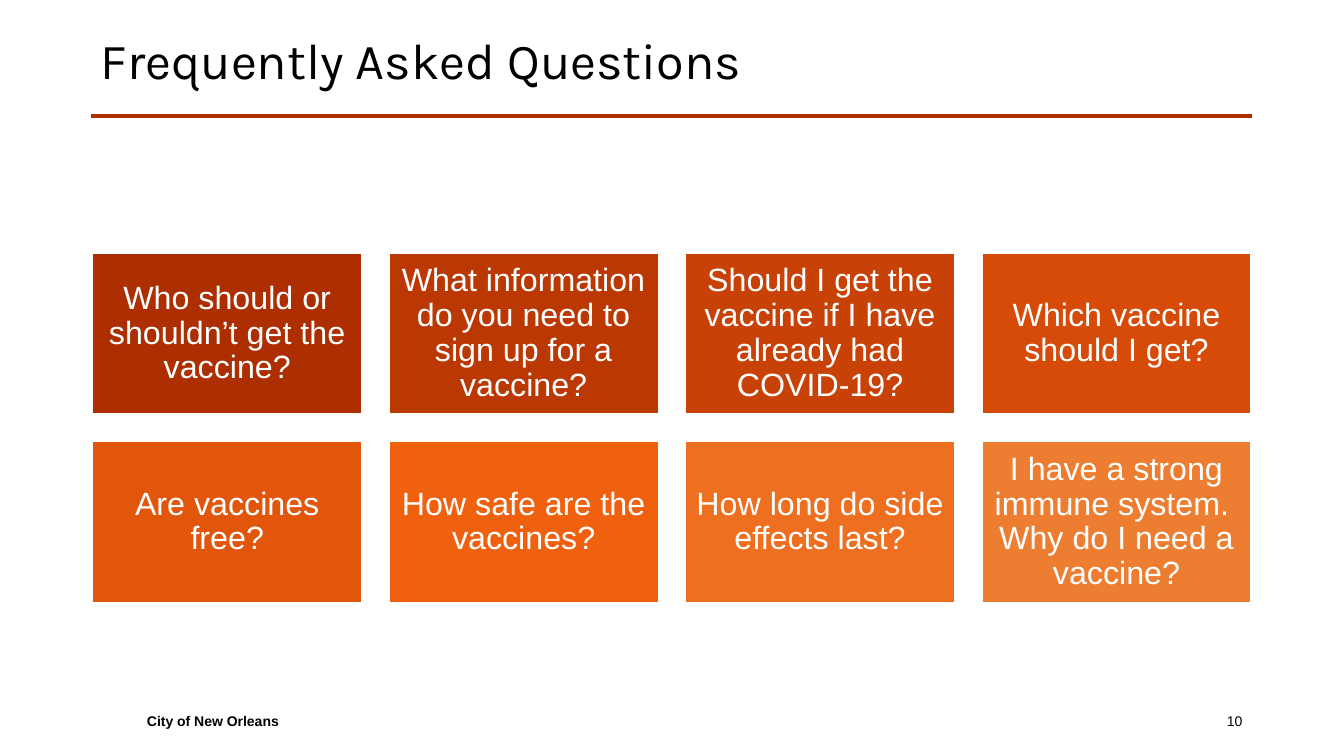
from lxml.etree import SubElement
from pptx import Presentation
from pptx.dml.color import RGBColor
from pptx.enum.shapes import MSO_CONNECTOR, MSO_SHAPE
from pptx.enum.text import MSO_ANCHOR, PP_ALIGN
from pptx.oxml.ns import qn
from pptx.util import Emu, Pt


def px(n):
    return Emu(n * 9144)


def color(code):
    return RGBColor.from_string(code)


class Deck:
    font = "Arial"
    ink = "000000"
    paper = "FFFFFF"
    accent = "AD2F01"

    def __init__(self, width, height):
        self.prs = Presentation()
        self.prs.slide_width, self.prs.slide_height = px(width), px(height)
        self.slide = self.prs.slides.add_slide(self.prs.slide_layouts[6])

    def fill_text(self, shape, text, size, ink, align, font=None, bold=False):
        frame = shape.text_frame
        frame.word_wrap = True
        frame.vertical_anchor = MSO_ANCHOR.MIDDLE
        para = frame.paragraphs[0]
        para.text = text
        para.alignment = align
        para.font.name = font or self.font
        para.font.size = Pt(size)
        para.font.bold = bold
        para.font.color.rgb = color(ink)
        return para

    def label(self, box, text, size, align=PP_ALIGN.LEFT, **style):
        shape = self.slide.shapes.add_textbox(*map(px, box))
        self.fill_text(shape, text, size, self.ink, align, **style)

    def rule(self, left, right, top):
        line = self.slide.shapes.add_connector(
            MSO_CONNECTOR.STRAIGHT, px(left), px(top), px(right), px(top))
        line.line.color.rgb = color(self.accent)
        line.line.width = Pt(2.75)
        SubElement(line._element.spPr, qn("a:effectLst"))

    def card(self, box, text, fill):
        shape = self.slide.shapes.add_shape(MSO_SHAPE.RECTANGLE, *map(px, box))
        shape.shadow.inherit = False
        shape.fill.solid()
        shape.fill.fore_color.rgb = color(fill)
        shape.line.color.rgb = color(self.paper)
        shape.line.width = Pt(1)
        frame = shape.text_frame
        frame.margin_left = frame.margin_right = px(10)
        frame.margin_top = frame.margin_bottom = px(10)
        para = self.fill_text(shape, text, 23, self.paper, PP_ALIGN.CENTER)
        para.line_spacing = 0.9


CARDS = [
    ("Who should or shouldn’t get the vaccine?", "AD2F01"),
    ("What information do you need to sign up for a vaccine?", "BB3803"),
    ("Should I get the vaccine if I have already had COVID-19?", "C84106"),
    ("Which vaccine should I get?", "D64B08"),
    ("Are vaccines free?", "E2560C"),
    ("How safe are the vaccines?", "EF610F"),
    ("How long do side effects last?", "EE6F20"),
    ("I have a strong immune system.  Why do I need a vaccine?", "ED7D31"),
]


def main():
    deck = Deck(1333, 750)
    deck.label((90, 16, 1150, 85), "Frequently Asked Questions", 36, font="Karla")
    deck.rule(90, 1242, 115)
    wide, high, gap = 267, 160, 27
    for i, (text, fill) in enumerate(CARDS):
        row, col = divmod(i, 4)
        box = (92 + col * (wide + gap), 251 + row * (high + gap), wide, high)
        deck.card(box, text, fill)
    deck.label((136, 695, 756, 40), "City of New Orleans", 10, bold=True)
    deck.label((942, 695, 300, 40), "10", 10, PP_ALIGN.RIGHT)
    deck.prs.save("out.pptx")


if __name__ == "__main__":
    main()
